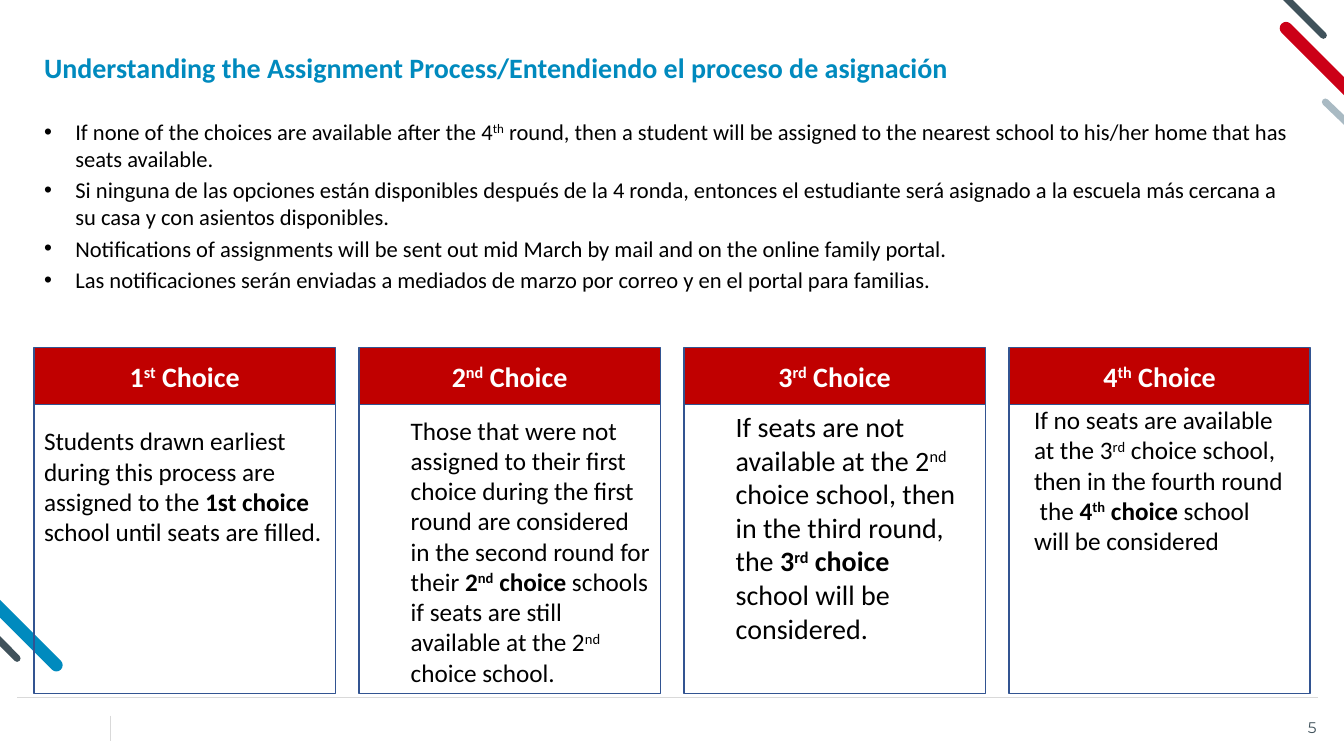
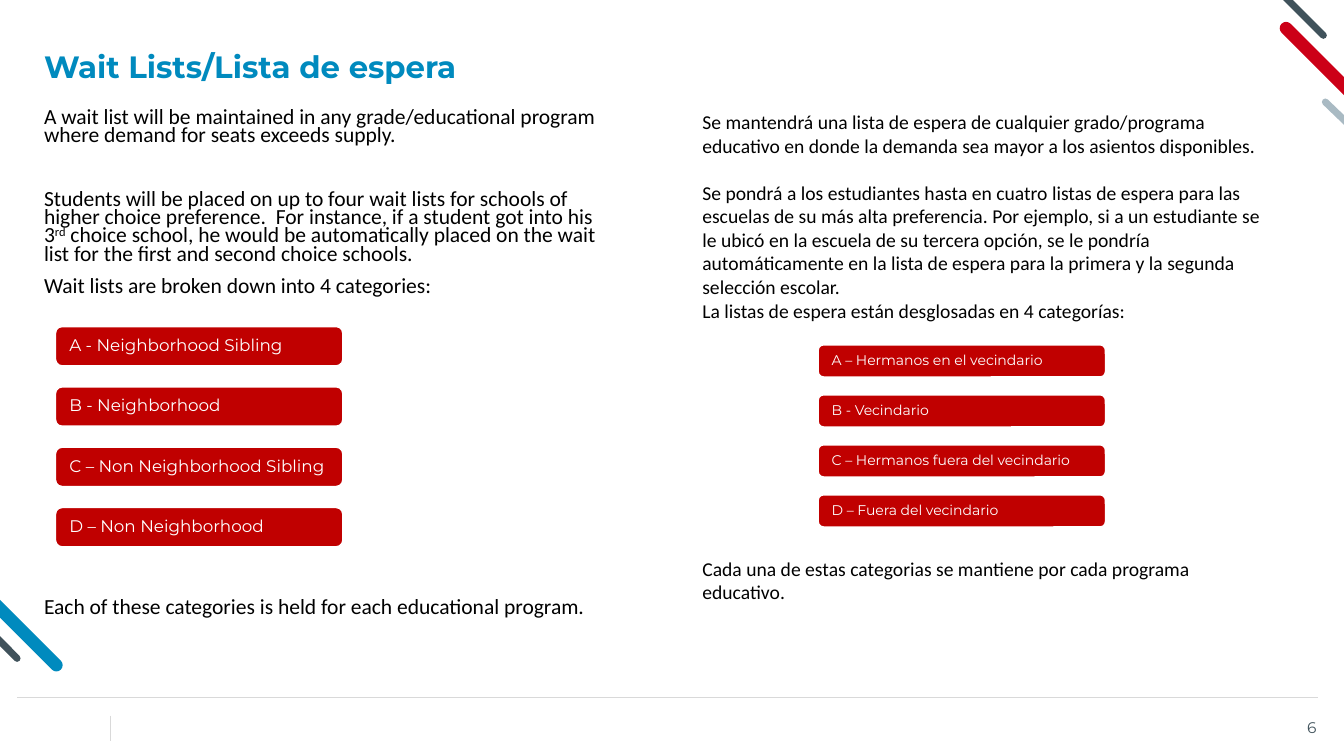
from dataclasses import dataclass
from typing import NamedTuple

import lxml.etree
import pptx
import pptx.dml.color
import pptx.enum.shapes
import pptx.enum.text
import pptx.oxml.ns
import pptx.shapes.base
import pptx.slide
import pptx.util

Cm = pptx.util.Cm
Pt = pptx.util.Pt
qn = pptx.oxml.ns.qn
SHAPE = pptx.enum.shapes.MSO_SHAPE
ALIGN = pptx.enum.text.PP_ALIGN
ANCHOR = pptx.enum.text.MSO_ANCHOR


@dataclass(frozen=True)
class Theme:
    blue: str = "008ABE"
    red: str = "C00000"
    stripe_red: str = "CC0017"
    slate: str = "40525B"
    mist: str = "A9BAC3"
    rule: str = "D9D9D9"
    outline: str = "325491"
    black: str = "000000"
    white: str = "FFFFFF"
    text_font: str = "Calibri"
    display_font: str = "Montserrat"
    heading: float = 20
    display: float = 22
    bullet: float = 16.1
    card: float = 18
    english: float = 15.4
    spanish: float = 14
    pill: float = 12
    small_pill: float = 10
    page: float = 11


T = Theme()


class Box(NamedTuple):
    """Position and size in centimetres."""
    left: float
    top: float
    width: float
    height: float

    def emu(self) -> list[pptx.util.Cm]:
        return [Cm(v) for v in self]


class Line(NamedTuple):
    x1: float
    y1: float
    x2: float
    y2: float
    color: str
    width: float
    cap: str = "rnd"


class Card(NamedTuple):
    heading: str
    text: str
    insets: tuple[float, float, float, float]
    size: float = T.card


class PillColumn(NamedTuple):
    labels: tuple[str, ...]
    first: Box
    pitch: float
    size: float


FRAME_LINES = (
    Line(0.43, 17.58, 33.22, 17.58, T.rule, 0.5, "flat"),
    Line(2.77, 18.03, 2.77, 18.67, T.rule, 0.5, "flat"),
    Line(32.41, 0.71, 34.21, 2.51, T.stripe_red, 9),
    Line(32.28, -0.18, 33.35, 0.89, T.slate, 5),
    Line(33.4, 2.57, 34.19, 3.33, T.mist, 5),
    Line(-0.18, 15.16, 1.42, 16.76, T.blue, 9),
    Line(-0.2, 15.95, 0.43, 16.59, T.slate, 5),
)
MARGIN = 0.86
TITLE_BOX = Box(MARGIN, 0.84, 32.13, 1.8)
PAGE_BOX = Box(32.41, 17.96, 1.02, 0.74)

BULLETS = (
    "If none of the choices are available after the 4^th^ round, then a student will be "
    "assigned to the nearest school to his/her home that has seats available.\n"
    "Si ninguna de las opciones están disponibles después de la 4 ronda, entonces el "
    "estudiante será asignado a la escuela más cercana a su casa y con asientos disponibles.\n"
    "Notifications of assignments will be sent out mid March by mail and on the online family portal.\n"
    "Las notificaciones serán enviadas a mediados de marzo por correo y en el portal para familias."
)
CARD_WIDTH, CARD_PITCH = 7.59, 8.19
HEADER_TOP, HEADER_HEIGHT, BODY_HEIGHT = 8.76, 1.43, 7.29
CARDS = (
    Card("1^st^ Choice",
         "Students drawn earliest during this process are assigned to the *1st choice* "
         "school until seats are filled.", (0.25, 0.54, 0.22, 0)),
    Card("2^nd^ Choice",
         "Those that were not assigned to their first choice during the first round are "
         "considered in the second round for their *2^nd^ choice* schools if seats are still "
         "available at the 2^nd^ choice school.", (1.3, 0.27, 0.22, 0)),
    Card("3^rd^ Choice",
         "If seats are not available at the 2^nd^ choice school, then in the third round, "
         "the *3^rd^ choice* school will be considered.", (1.3, 0.13, 0.5, 0), T.heading),
    Card("4^th^ Choice",
         "If no seats are available at the 3^rd^ choice school, then in the fourth round  "
         "the *4^th^ choice* school will be considered", (0.63, 0, 0.6, 0)),
)

ENGLISH = (
    "A wait list will be maintained in any grade/educational program where demand for seats "
    "exceeds supply.\n"
    "Students will be placed on up to four wait lists for schools of higher choice preference.  "
    "For instance, if a student got into his 3^rd^ choice school, he would be automatically "
    "placed on the wait list for the first and second choice schools.\n"
    "Wait lists are broken down into 4 categories:"
)
ENGLISH_END = "Each of these categories is held for each educational program."
SPANISH = (
    "Se mantendrá una lista de espera de cualquier grado/programa educativo en donde la demanda "
    "sea mayor a los asientos disponibles.\n"
    "Se pondrá a los estudiantes hasta en cuatro listas de espera para las escuelas de su más "
    "alta preferencia. Por ejemplo, si a un estudiante se le ubicó en la escuela de su tercera "
    "opción, se le pondría automáticamente en la lista de espera para la primera y la segunda "
    "selección escolar.\n"
    "La listas de espera están desglosadas en 4 categorías:"
)
SPANISH_END = "Cada una de estas categorias se mantiene por cada programa educativo."
SPANISH_LEFT, COLUMN_WIDTH = 17.45, 14.94
PILL_COLUMNS = (
    PillColumn(("A - Neighborhood Sibling", "B - Neighborhood",
                "C – Non Neighborhood Sibling", "D – Non Neighborhood"),
               Box(1.4, 8.23, 7.24, 0.99), 1.52, T.pill),
    PillColumn(("A – Hermanos en el vecindario", "B - Vecindario",
                "C – Hermanos fuera del vecindario", "D – Fuera del vecindario"),
               Box(20.62, 8.69, 7.24, 0.81), 1.26, T.small_pill),
)


def rgb(color: str) -> pptx.dml.color.RGBColor:
    return pptx.dml.color.RGBColor.from_string(color)


def write(sp: pptx.shapes.base.BaseShape, text: str, *, size: float, color: str = T.black,
          font: str = T.text_font, bold: bool = False, align: ALIGN = ALIGN.LEFT,
          anchor: ANCHOR = ANCHOR.TOP, spacing: float = 1.0, gaps: tuple[float, ...] = (),
          after: float = 0, bullet: bool = False, wrap: bool = True,
          insets: tuple[float, float, float, float] = (0.25, 0.13, 0.25, 0.13)) -> None:
    """Fill a shape: newlines part paragraphs, *...* is bold, ^...^ is superscript.

    gaps holds the space before each paragraph after the first.
    """
    tf = sp.text_frame
    tf.word_wrap = wrap
    tf.vertical_anchor = anchor
    tf.margin_left, tf.margin_top, tf.margin_right, tf.margin_bottom = map(Cm, insets)
    for i, paragraph in enumerate(text.split("\n")):
        p = tf.paragraphs[0] if i == 0 else tf.add_paragraph()
        if bullet:
            pPr = p._p.get_or_add_pPr()
            pPr.set("marL", str(Cm(0.79)))
            pPr.set("indent", str(-Cm(0.79)))
            lxml.etree.SubElement(pPr, qn("a:buFont")).set("typeface", "Arial")
            lxml.etree.SubElement(pPr, qn("a:buChar")).set("char", "•")
        p.alignment = align
        p.line_spacing = spacing
        p.space_after = Pt(after)
        if i and gaps:
            p.space_before = Pt(gaps[i - 1])
        for j, weighted in enumerate(paragraph.split("*")):
            for k, part in enumerate(weighted.split("^")):
                if not part:
                    continue
                r = p.add_run()
                r.text = part
                r.font.name = font
                r.font.size = Pt(size)
                r.font.bold = bold or j % 2 == 1
                r.font.color.rgb = rgb(color)
                if k % 2:
                    r._r.get_or_add_rPr().set("baseline", "30000")


def add_text(slide: pptx.slide.Slide, box: Box, text: str, **fmt) -> None:
    write(slide.shapes.add_textbox(*box.emu()), text, **fmt)


def add_block(slide: pptx.slide.Slide, box: Box, text: str, *, line: str,
              fill: str | None = None, shape: SHAPE = SHAPE.RECTANGLE, **fmt) -> None:
    sp = slide.shapes.add_shape(shape, *box.emu())
    sp.shadow.inherit = False
    if fill:
        sp.fill.solid()
        sp.fill.fore_color.rgb = rgb(fill)
    else:
        sp.fill.background()
    sp.line.color.rgb = rgb(line)
    sp.line.width = Pt(1)
    write(sp, text, **fmt)


def add_line(slide: pptx.slide.Slide, line: Line) -> None:
    ends = map(Cm, line[:4])
    c = slide.shapes.add_connector(pptx.enum.shapes.MSO_CONNECTOR.STRAIGHT, *ends)
    c.line.color.rgb = rgb(line.color)
    c.line.width = Pt(line.width)
    spPr = c._element.spPr
    spPr.find(qn("a:ln")).set("cap", line.cap)
    lxml.etree.SubElement(spPr, qn("a:effectLst"))


def add_framed_slide(prs: pptx.presentation.Presentation, page: int, title: str,
                     **title_fmt) -> pptx.slide.Slide:
    """Add a slide with the stripes, footer rules, page number and title."""
    slide = prs.slides.add_slide(prs.slide_layouts[6])
    for line in FRAME_LINES:
        add_line(slide, line)
    add_text(slide, PAGE_BOX, str(page), size=T.page, color=T.slate,
             font=T.display_font, align=ALIGN.RIGHT, wrap=False)
    add_text(slide, TITLE_BOX, title, color=T.blue, bold=True,
             anchor=ANCHOR.MIDDLE, spacing=0.9, **title_fmt)
    return slide


def add_card(slide: pptx.slide.Slide, left: float, card: Card) -> None:
    body_top = HEADER_TOP + HEADER_HEIGHT
    add_block(slide, Box(left, body_top, CARD_WIDTH, BODY_HEIGHT), card.text,
              line=T.outline, size=card.size, insets=card.insets)
    add_block(slide, Box(left, HEADER_TOP, CARD_WIDTH, HEADER_HEIGHT), card.heading,
              line=T.outline, fill=T.red, size=T.heading, color=T.white, bold=True,
              align=ALIGN.CENTER, anchor=ANCHOR.MIDDLE)


def add_pills(slide: pptx.slide.Slide, column: PillColumn) -> None:
    for i, label in enumerate(column.labels):
        box = column.first._replace(top=column.first.top + i * column.pitch)
        add_block(slide, box, label, line=T.white, fill=T.red, shape=SHAPE.ROUNDED_RECTANGLE,
                  size=column.size, color=T.white, font=T.display_font, spacing=0.9,
                  anchor=ANCHOR.MIDDLE, insets=(0.3, 0, 0.3, 0))


def build_assignment(prs: pptx.presentation.Presentation) -> None:
    slide = add_framed_slide(
        prs, 5, "Understanding the Assignment Process/Entendiendo el proceso de asignación",
        size=T.heading)
    add_text(slide, Box(MARGIN, 2.84, 32.13, 4.9), BULLETS,
             size=T.bullet, after=3, bullet=True)
    for i, card in enumerate(CARDS):
        add_card(slide, MARGIN + i * CARD_PITCH, card)


def build_wait_lists(prs: pptx.presentation.Presentation) -> None:
    slide = add_framed_slide(prs, 6, "Wait Lists/Lista de espera",
                             size=T.display, font=T.display_font)
    add_text(slide, Box(MARGIN, 2.64, COLUMN_WIDTH, 5.2), ENGLISH,
             size=T.english, spacing=0.7, gaps=(33, 10))
    add_text(slide, Box(MARGIN, 14.99, COLUMN_WIDTH, 1), ENGLISH_END,
             size=T.english, spacing=0.7)
    add_text(slide, Box(SPANISH_LEFT, 2.64, COLUMN_WIDTH, 5.8), SPANISH,
             size=T.spanish, gaps=(17, 0))
    add_text(slide, Box(SPANISH_LEFT, 13.9, COLUMN_WIDTH, 1.5), SPANISH_END, size=T.spanish)
    for column in PILL_COLUMNS:
        add_pills(slide, column)


def main() -> None:
    prs = pptx.Presentation()
    prs.slide_width, prs.slide_height = Cm(33.87), Cm(19.05)
    build_assignment(prs)
    build_wait_lists(prs)
    prs.save("out.pptx")


if __name__ == "__main__":
    main()
